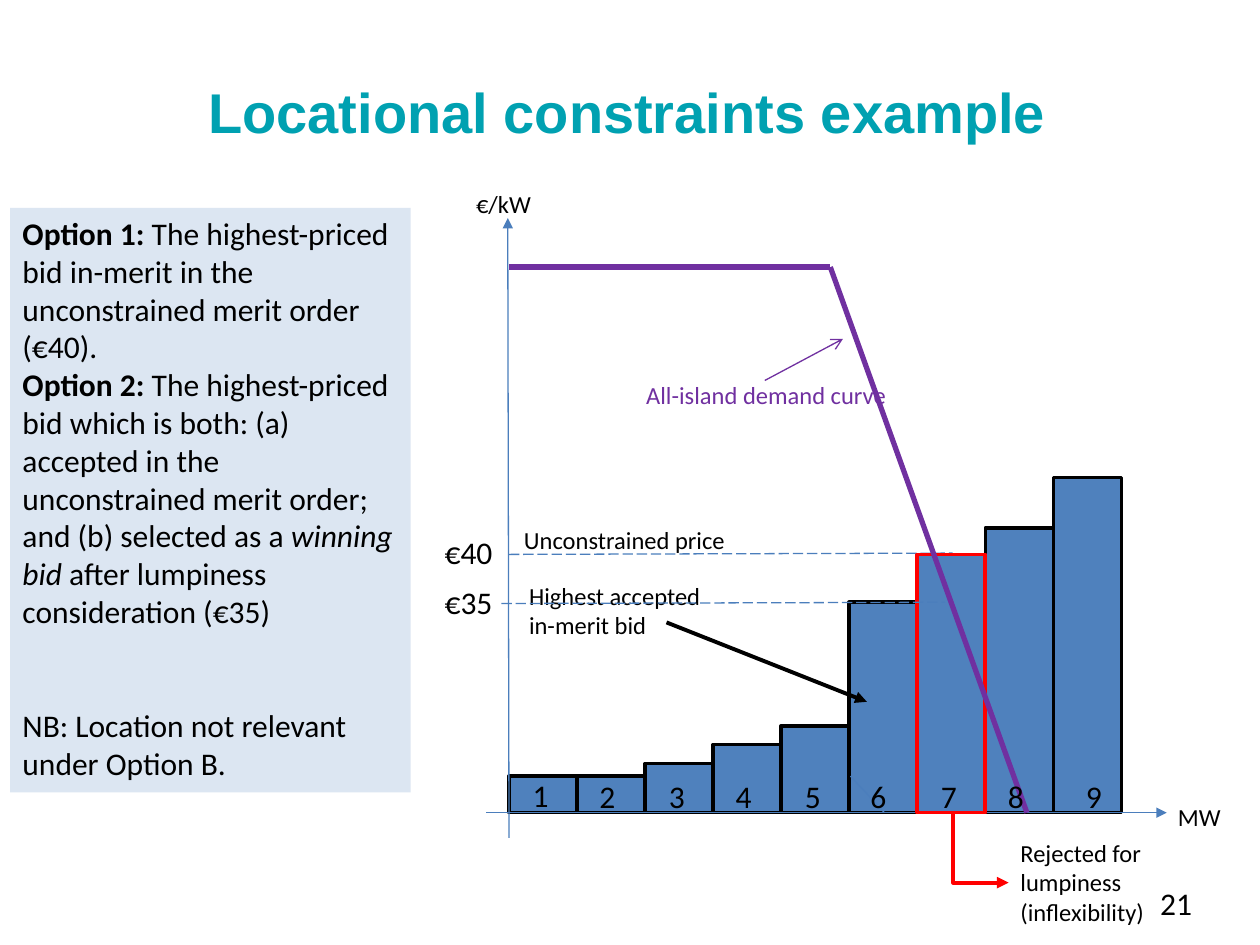
from dataclasses import dataclass

from lxml import etree
from pptx import Presentation
from pptx.dml.color import RGBColor
from pptx.enum.dml import MSO_LINE
from pptx.enum.shapes import MSO_CONNECTOR, MSO_SHAPE
from pptx.enum.text import MSO_ANCHOR, MSO_AUTO_SIZE, PP_ALIGN
from pptx.oxml.ns import qn
from pptx.util import Inches, Pt

RECT = MSO_SHAPE.RECTANGLE
STRAIGHT, ELBOW = MSO_CONNECTOR.STRAIGHT, MSO_CONNECTOR.ELBOW
LONG_DASH = MSO_LINE.LONG_DASH
TOP, MIDDLE = MSO_ANCHOR.TOP, MSO_ANCHOR.MIDDLE
LEFT, CENTER, RIGHT = PP_ALIGN.LEFT, PP_ALIGN.CENTER, PP_ALIGN.RIGHT
GROW = MSO_AUTO_SIZE.SHAPE_TO_FIT_TEXT

BLACK = RGBColor(0x00, 0x00, 0x00)
TEAL = RGBColor(0x00, 0xA1, 0xB1)
BLUE = RGBColor(0x4F, 0x81, 0xBD)
AXIS = RGBColor(0x4B, 0x7E, 0xBC)
PURPLE = RGBColor(0x70, 0x30, 0xA0)
RED = RGBColor(0xFF, 0x00, 0x00)
PALE = RGBColor(0xDC, 0xE6, 0xF2)

ORIGIN_X, BASE_Y, BAR_W = 4.04, 6.45, 0.54


@dataclass
class Bar:
    number: int
    top: float
    label_x: float
    label_y: float = 6.12
    outline: RGBColor = BLACK


@dataclass
class Line:
    x1: float
    y1: float
    x2: float
    y2: float
    color: RGBColor = AXIS
    width: float = 0.75
    head: str = ""
    dashed: bool = False


@dataclass
class Label:
    text: str
    x: float
    y: float
    w: float
    h: float = 0.34
    size: int = 14
    color: RGBColor = BLACK
    wrap: bool = False


BARS = [
    Bar(1, 6.16, 4.13, 6.11), Bar(2, 6.16, 4.66), Bar(3, 6.06, 5.21),
    Bar(4, 5.91, 5.74), Bar(5, 5.76, 6.29), Bar(6, 4.78, 6.81),
    Bar(8, 4.19, 7.9), Bar(9, 3.79, 8.52),
]
REJECTED_BAR = Bar(7, 4.4, 7.37, outline=RED)

LINES_BEHIND = [
    Line(3.86, BASE_Y, 9.26, BASE_Y, head="triangle"),
    Line(ORIGIN_X, 6.65, 4.03, 1.73, head="triangle"),
    Line(ORIGIN_X, 2.12, 6.59, 2.12, PURPLE, 3),
    Line(ORIGIN_X, 4.4, 7.56, 4.39, dashed=True),
    Line(6.07, 3.02, 6.69, 2.69, PURPLE, head="arrow"),
    Line(6.75, 6.16, 7.02, BASE_Y),
]
LINES_FRONT = [
    Line(6.59, 2.12, 8.15, BASE_Y, PURPLE, 3),
    Line(5.29, 4.94, 6.88, 5.57, BLACK, 2.25, "triangle"),
    Line(3.98, 4.79, 7.5, 4.78, dashed=True),
]
REJECTION = Line(7.51, 6.51, 8.06, 6.95, RED, 2.25, "triangle")

LABELS_BEHIND = [
    Label("MW", 9.25, 6.32, 0.55),
    Label("€/kW", 3.68, 1.45, 0.64),
    Label("Highest accepted in-merit bid", 4.1, 4.56, 1.71, 0.57, wrap=True),
    Label("Unconstrained price", 4.06, 4.12, 2.02, wrap=True),
    Label("All-island demand curve", 5.03, 2.97, 2.12, color=PURPLE),
]
LABELS_FRONT = [
    Label("€40", 3.43, 4.18, 0.59, 0.4, 18),
    Label("€35", 3.43, 4.58, 0.59, 0.4, 18),
    Label("Rejected for lumpiness (inflexibility)", 8, 6.6, 1.71, 0.81, wrap=True),
]

OPTIONS = [
    [("Option 1:", "b"),
     (" The highest-priced bid in-merit in the unconstrained merit order (€40).", "")],
    [("Option 2:", "b"),
     (" The highest-priced bid which is both: (a) accepted in the unconstrained "
      "merit order; and (b) selected as a ", ""),
     ("winning bid", "i"),
     (" after lumpiness consideration (€35)", "")],
    [("NB: Location not relevant under Option B.", "")],
]


def add_run(p, text: str, size: float, color: RGBColor = BLACK,
            font: str = "Calibri", bold: bool = False, italic: bool = False) -> None:
    r = p.add_run()
    r.text = text
    r.font.name, r.font.size = font, Pt(size)
    r.font.bold, r.font.italic = bold, italic
    r.font.color.rgb = color


def add_text(s, lb: Label, align=LEFT, anchor=TOP, grow: bool = True, **fmt) -> None:
    tf = s.shapes.add_textbox(Inches(lb.x), Inches(lb.y), Inches(lb.w), Inches(lb.h)).text_frame
    tf.word_wrap = lb.wrap
    tf.vertical_anchor = anchor
    if grow:
        tf.auto_size = GROW
    p = tf.paragraphs[0]
    p.alignment = align
    add_run(p, lb.text, lb.size, lb.color, **fmt)


def add_rect(s, x: float, y: float, w: float, h: float, fill: RGBColor):
    sp = s.shapes.add_shape(RECT, Inches(x), Inches(y), Inches(w), Inches(h))
    sp.shadow.inherit = False
    sp.fill.solid()
    sp.fill.fore_color.rgb = fill
    sp.line.fill.background()
    return sp


def add_bar(s, bar: Bar) -> None:
    x = ORIGIN_X + (bar.number - 1) * BAR_W
    sp = add_rect(s, x, bar.top, BAR_W, BASE_Y - bar.top, BLUE)
    sp.line.color.rgb = bar.outline
    sp.line.width = Pt(2)


def add_line(s, ln: Line, kind=STRAIGHT):
    c = s.shapes.add_connector(kind, Inches(ln.x1), Inches(ln.y1), Inches(ln.x2), Inches(ln.y2))
    c.line.color.rgb = ln.color
    c.line.width = Pt(ln.width)
    if ln.dashed:
        c.line.dash_style = LONG_DASH
    if ln.head:
        etree.SubElement(c.line._get_or_add_ln(), qn("a:tailEnd"), type=ln.head)
    etree.SubElement(c._element.spPr, qn("a:effectLst"))
    return c


def add_rejection_arrow(s) -> None:
    spPr = add_line(s, REJECTION, ELBOW)._element.spPr
    xfrm = spPr.find(qn("a:xfrm"))
    xfrm.set("rot", "16200000")
    xfrm.set("flipH", "1")
    spPr.find(qn("a:prstGeom")).set("prst", "bentConnector2")


def add_options(s) -> None:
    tf = add_rect(s, 0.08, 1.65, 3.18, 4.64, PALE).text_frame
    tf.word_wrap = True
    tf.vertical_anchor = TOP
    for i, runs in enumerate(OPTIONS):
        p = tf.paragraphs[0] if i == 0 else tf.add_paragraph()
        p.alignment = LEFT
        for text, style in runs:
            add_run(p, text, 18, bold=style == "b", italic=style == "i")
    p.space_before = Pt(43.5)


def main() -> None:
    """Build the locational constraints slide."""
    prs = Presentation()
    prs.slide_width, prs.slide_height = Inches(10), Inches(7.5)
    s = prs.slides.add_slide(prs.slide_layouts[6])
    add_text(s, Label("21", 8.62, 6.97, 0.94, 0.4, 18, wrap=True), RIGHT)
    add_text(s, Label("Locational constraints example", 0.48, 0.26, 9, 1.25, 32, TEAL, True),
             CENTER, MIDDLE, grow=False, font="Arial", bold=True)
    for bar in BARS:
        add_bar(s, bar)
    for ln in LINES_BEHIND:
        add_line(s, ln)
    for lb in LABELS_BEHIND:
        add_text(s, lb)
    add_rejection_arrow(s)
    add_bar(s, REJECTED_BAR)
    for ln in LINES_FRONT:
        add_line(s, ln)
    for bar in BARS + [REJECTED_BAR]:
        add_text(s, Label(str(bar.number), bar.label_x, bar.label_y, 0.33, 0.4, 18))
    for lb in LABELS_FRONT:
        add_text(s, lb)
    add_options(s)
    prs.save("out.pptx")


if __name__ == "__main__":
    main()
